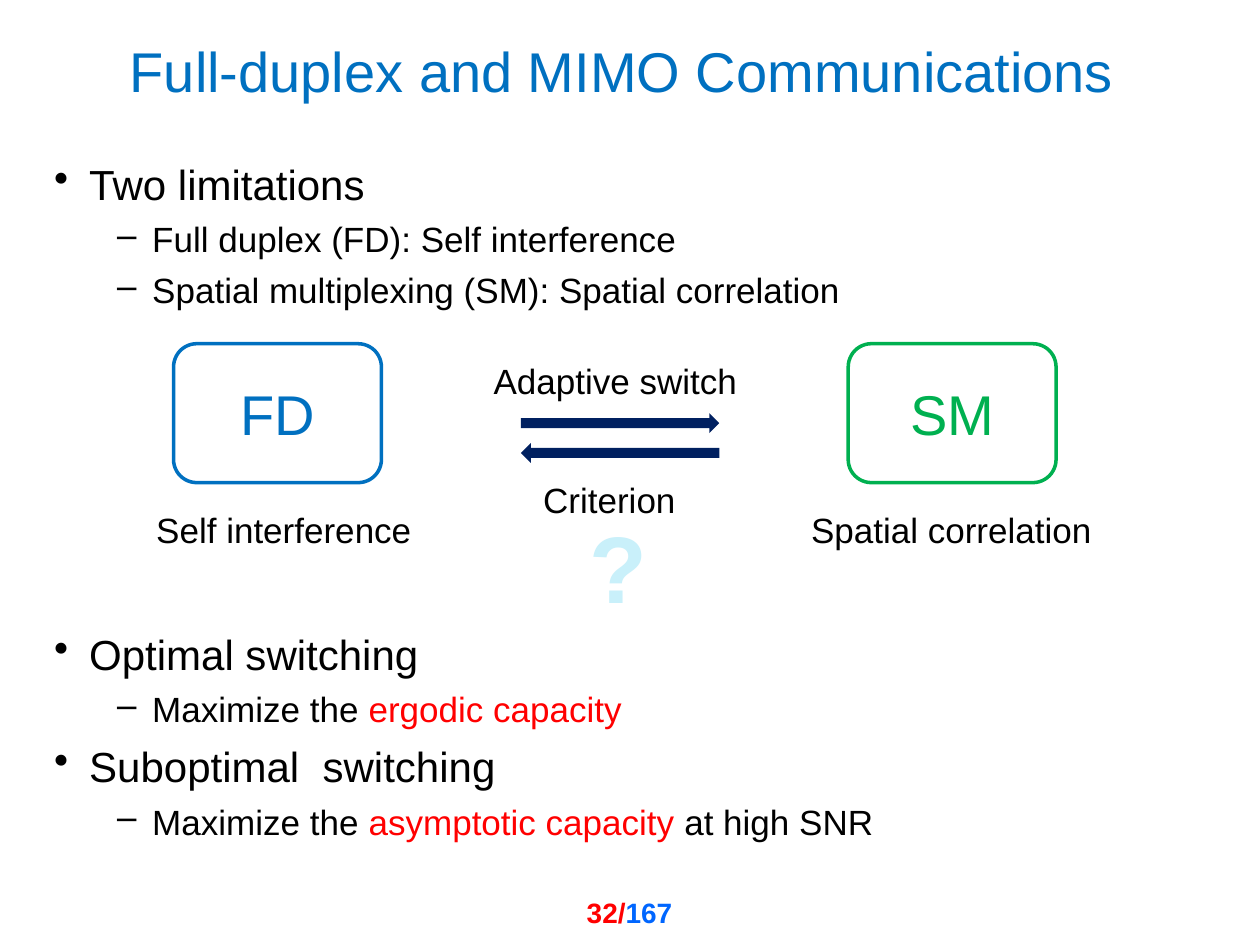
from lxml import etree
from pptx import Presentation
from pptx import util as u
from pptx.dml.color import RGBColor
from pptx.enum import shapes, text
from pptx.oxml.ns import qn

COLOURS = {
    "black": "000000", "white": "FFFFFF", "blue": "0070C0", "green": "00B050",
    "navy": "002060", "red": "FF0000", "page blue": "0066FF", "pale cyan": "C9F0FA",
}
LIMITATIONS = [
    (0, [("Two limitations", "black")]),
    (1, [("Full duplex (FD): Self interference", "black")]),
    (1, [("Spatial multiplexing (SM): Spatial correlation", "black")]),
]
SWITCHING = [
    (0, [("Optimal switching", "black")]),
    (1, [("Maximize the ", "black"), ("ergodic capacity", "red")]),
    (0, [("Suboptimal  switching", "black")]),
    (1, [("Maximize the ", "black"), ("asymptotic capacity ", "red"),
         ("at high SNR", "black")]),
]
# Bullet, left margin and text size of each outline level
LEVELS = [("•", u.Cm(0.71), 24), ("–", u.Cm(1.98), 20)]
HANGING = u.Cm(0.71)
NO_INSETS = dict.fromkeys(
    ("margin_left", "margin_top", "margin_right", "margin_bottom"), 0)


def colour(name):
    return RGBColor.from_string(COLOURS[name])


def set_all(target, **values):
    for name, value in values.items():
        setattr(target, name, value)


def add_spans(para, parts, size, bold=False):
    """Append (wording, colour name) parts to a paragraph and return the last run."""
    for wording, tint in parts:
        span = para.add_run()
        span.text = wording
        set_all(span.font, name="Arial", size=u.Pt(size), bold=bold)
        span.font.color.rgb = colour(tint)
    return span


def set_title(slide, wording):
    title = slide.shapes.title
    set_all(title, left=u.Cm(0.93), top=u.Cm(0.64), width=u.Cm(23.22), height=u.Cm(1.55))
    set_all(title.text_frame, word_wrap=True,
            vertical_anchor=text.MSO_ANCHOR.MIDDLE, **NO_INSETS)
    para = title.text_frame.paragraphs[0]
    para.alignment = text.PP_ALIGN.CENTER
    add_spans(para, [(wording, "blue")], 32)


def add_outline(slide, top, height, items):
    box = slide.shapes.add_textbox(u.Cm(1.09), u.Cm(top), u.Cm(23.22), u.Cm(height))
    frame = box.text_frame
    set_all(frame, word_wrap=True, **NO_INSETS)
    for index, (level, parts) in enumerate(items):
        para = frame.add_paragraph() if index else frame.paragraphs[0]
        bullet, margin, size = LEVELS[level]
        properties = para._p.get_or_add_pPr()
        properties.set("marL", str(margin))
        properties.set("indent", str(-HANGING))
        etree.SubElement(properties, qn("a:buChar")).set("char", bullet)
        set_all(para, level=level, line_spacing=1.05,
                space_before=u.Pt(size * 0.2 if index else 0))
        add_spans(para, parts, size)


def add_label(slide, left, top, width, parts, size=20, height=1.02,
              align=text.PP_ALIGN.LEFT, bold=False):
    box = slide.shapes.add_textbox(u.Cm(left), u.Cm(top), u.Cm(width), u.Cm(height))
    box.text_frame.word_wrap = True
    para = box.text_frame.paragraphs[0]
    para.alignment = align
    return add_spans(para, parts, size, bold)


def add_mode(slide, left, wording, tint):
    box = slide.shapes.add_shape(shapes.MSO_SHAPE.ROUNDED_RECTANGLE,
                                 u.Cm(left), u.Cm(6.93), u.Cm(4.19), u.Cm(2.8))
    box.shadow.inherit = False
    box.fill.solid()
    box.fill.fore_color.rgb = colour("white")
    box.line.color.rgb = colour(tint)
    box.line.width = u.Pt(2)
    box.text_frame.vertical_anchor = text.MSO_ANCHOR.MIDDLE
    para = box.text_frame.paragraphs[0]
    para.alignment = text.PP_ALIGN.CENTER
    add_spans(para, [(wording, tint)], 32)


def add_switch_arrow(slide, top, rotation):
    arrow = slide.shapes.add_shape(shapes.MSO_SHAPE.RIGHT_ARROW,
                                   u.Cm(10.5), u.Cm(top), u.Cm(4), u.Cm(0.4))
    arrow.rotation = rotation
    arrow.shadow.inherit = False
    arrow.fill.solid()
    arrow.fill.fore_color.rgb = colour("navy")
    arrow.line.fill.background()


def outline_letters(span, tint):
    """Give the letters of a run a thin contour."""
    contour = etree.Element(qn("a:ln"), w=str(u.Pt(1)))
    fill = etree.SubElement(contour, qn("a:solidFill"))
    etree.SubElement(fill, qn("a:srgbClr")).set("val", COLOURS[tint])
    span.font._element.insert(0, contour)


def main():
    deck = Presentation()
    set_all(deck, slide_width=u.Cm(25.4), slide_height=u.Cm(19.05))
    slide = deck.slides.add_slide(deck.slide_layouts[5])

    set_title(slide, "Full-duplex and MIMO Communications")
    add_outline(slide, 3.14, 3.2, LIMITATIONS)
    add_outline(slide, 12.62, 4.6, SWITCHING)

    add_mode(slide, 3.5, "FD", "blue")
    add_mode(slide, 17.1, "SM", "green")
    for top, rotation in ((8.33, 0), (8.93, 180)):
        add_switch_arrow(slide, top, rotation)

    for left, top, width, wording in (
            (2.9, 10.13, 7.6, "Self interference"),
            (16.1, 10.13, 7.6, "Spatial correlation"),
            (9.7, 7.13, 6.4, "Adaptive switch"),
            (10.7, 9.53, 5.8, "Criterion")):
        add_label(slide, left, top, width, [(wording, "black")])

    mark = add_label(slide, 11.46, 10.13, 2, [("?", "pale cyan")], size=54,
                     height=2.56, align=text.PP_ALIGN.CENTER, bold=True)
    outline_letters(mark, "pale cyan")
    add_label(slide, 10.1, 17.93, 3.7, [("32/", "red"), ("167", "page blue")],
              size=16, height=0.8, align=text.PP_ALIGN.RIGHT, bold=True)
    deck.save("out.pptx")


if __name__ == "__main__":
    main()
